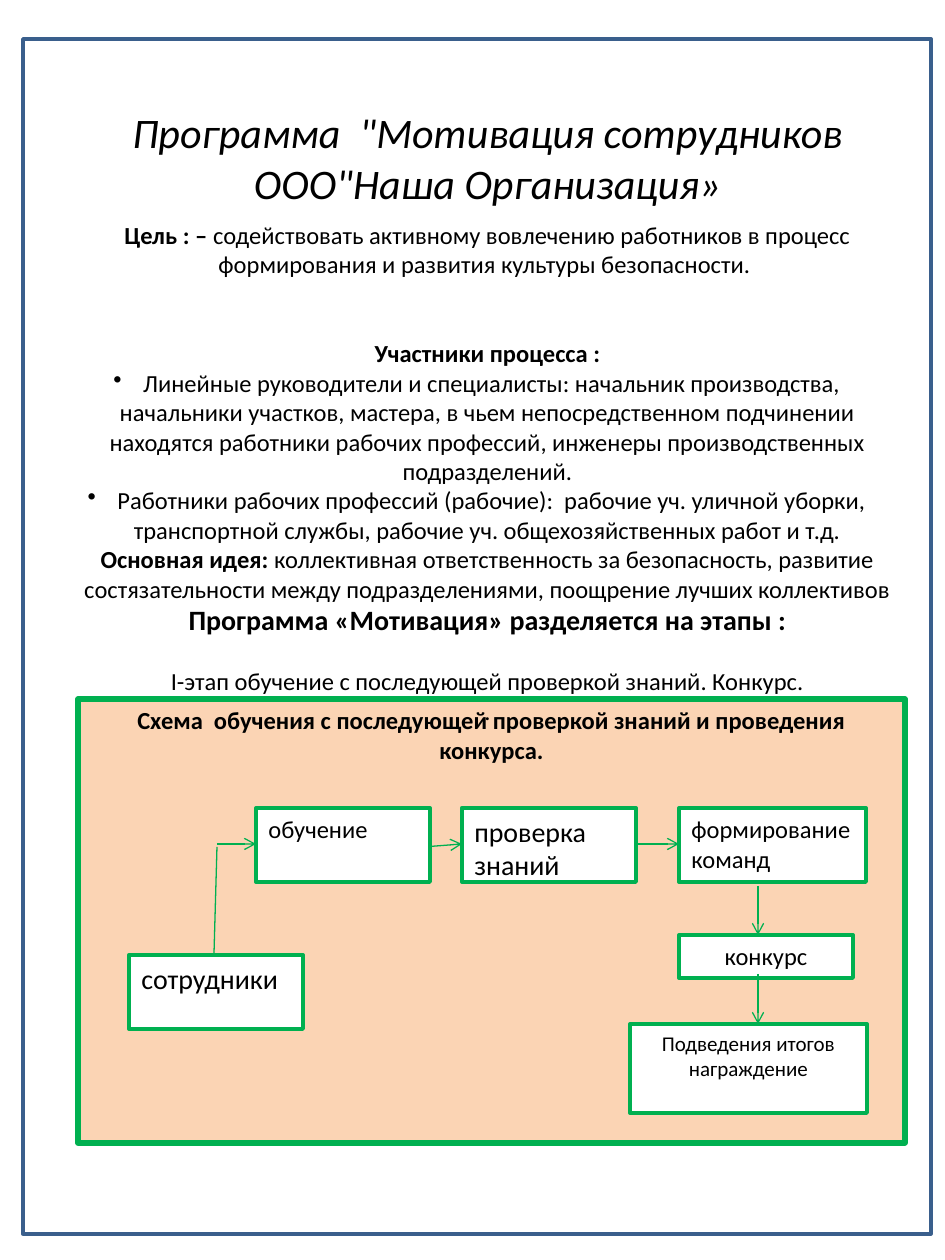
from pptx import Presentation, util as u
from pptx.dml.color import RGBColor
from pptx.enum import shapes, text
from pptx.oxml.ns import qn
from lxml import etree

PX = 914400 / 126
GREEN, BLUE, PEACH = "00B050", "3A5F8C", "FBD4B4"
WHITE, BLACK = "FFFFFF", "000000"
MID, LEFT = text.PP_ALIGN.CENTER, text.PP_ALIGN.LEFT


def px(*vals):
    return [u.Emu(round(v * PX)) for v in vals]


def color(fmt, code):
    fmt.rgb = RGBColor.from_string(code)


def style(font, **vals):
    for key, val in vals.items():
        setattr(font, key, val)


def para(frame, first, runs, size, align=MID, gap=0, after=0, dot=False, italic=False):
    """Add one paragraph; runs are (words, bold) pairs."""
    par = frame.paragraphs[0] if first else frame.add_paragraph()
    style(par, alignment=align, space_before=u.Pt(gap), space_after=u.Pt(after))
    if dot:
        etree.SubElement(par._p.get_or_add_pPr(), qn("a:buChar")).set("char", "•")
    for words, bold in runs:
        run = par.add_run()
        run.text = words
        style(run.font, name="Calibri", size=u.Pt(size), bold=bold, italic=italic)
        color(run.font.color, BLACK)


def rect(slide, box, fill, edge, width):
    shape = slide.shapes.add_shape(shapes.MSO_SHAPE.RECTANGLE, *px(*box))
    shape.shadow.inherit = False
    if fill:
        shape.fill.solid()
        color(shape.fill.fore_color, fill)
    else:
        shape.fill.background()
    color(shape.line.color, edge)
    shape.line.width = u.Pt(width)
    style(shape.text_frame, word_wrap=True, vertical_anchor=text.MSO_ANCHOR.TOP)
    return shape.text_frame


def link(slide, ends, arrow=True):
    line = slide.shapes.add_connector(shapes.MSO_CONNECTOR.STRAIGHT, *px(*ends))
    color(line.line.color, GREEN)
    line.line.width = u.Pt(0.75)
    if arrow:
        etree.SubElement(line.line._get_or_add_ln(), qn("a:tailEnd")).set("type", "arrow")
    etree.SubElement(line._element.spPr, qn("a:effectLst"))


def panel(slide, box):
    frame = rect(slide, box, PEACH, GREEN, 3)
    title = "Схема  обучения с последующей проверкой знаний и проведения конкурса."
    para(frame, True, [(title, True)], 14, after=10)


def program(slide, box):
    frame = slide.shapes.add_textbox(*px(*box)).text_frame
    style(frame, word_wrap=True, vertical_anchor=text.MSO_ANCHOR.MIDDLE)
    rows = [
        ([("Программа  \"Мотивация сотрудников ООО\"Наша Организация»", False)], 24,
         {"italic": True}),
        ([("Цель : – ", True),
          ("содействовать активному вовлечению работников в процесс "
           "формирования и развития культуры безопасности. ", False)], 14, {"gap": 7}),
        ([("Участники процесса :", True)], 14, {"gap": 34}),
        ([("Линейные руководители и специалисты: начальник производства, "
           "начальники участков, мастера, в чьем непосредственном подчинении "
           "находятся работники рабочих профессий, инженеры производственных "
           "подразделений.", False)], 14, {"dot": True}),
        ([("Работники рабочих профессий (рабочие):  рабочие уч. уличной уборки, "
           "транспортной службы, рабочие уч. общехозяйственных работ и т.д.", False)], 14,
         {"dot": True}),
        ([("Основная идея: ", True),
          ("коллективная ответственность за безопасность, развитие "
           "состязательности между подразделениями, поощрение лучших коллективов",
           False)], 14, {}),
        ([("Программа «Мотивация» разделяется на этапы :", True)], 16, {}),
        ([("I-этап обучение с последующей проверкой знаний. Конкурс.", False)], 14,
         {"gap": 17}),
        ([(".", False)], 14, {}),
    ]
    for i, (runs, size, opts) in enumerate(rows):
        para(frame, i == 0, runs, size, **opts)


def scheme(slide, box):
    """Steps and arrows, placed from the panel's top left corner."""
    x, y = box[:2]
    top, mid, tall, wide = 109, 145, 74, 174

    def join(a, b, c, d, arrow=True):
        link(slide, (x + a, y + b, x + c, y + d), arrow)

    # Arrows under the boxes
    join(136, 256, 139, 148, arrow=False)
    join(139, mid, 178, mid)
    join(345, 148, 384, mid)
    join(558, mid, 601, mid)
    join(680, 187, 680, 236)
    # Steps
    steps = [
        (51, 256, wide, tall, ["сотрудники"], 16, LEFT),
        (178, top, wide, tall, ["обучение"], 14, LEFT),
        (384, top, wide, tall, ["проверка знаний"], 16, LEFT),
        (601, top, 187, tall, ["формирование команд"], 14, LEFT),
        (601, 236, wide, 43, ["конкурс"], 14, MID),
        (552, 325, 237, 89, ["Подведения итогов", "награждение"], 12, MID),
    ]
    for a, b, w, h, lines, size, align in steps:
        frame = rect(slide, (x + a, y + b, w, h), WHITE, GREEN, 2.25)
        for i, words in enumerate(lines):
            para(frame, i == 0, [(words, False)], size, align)
    # Arrow over the contest box
    join(680, 275, 680, 325)


def main():
    prs = Presentation()
    prs.slide_width, prs.slide_height = px(945, 1260)
    slide = prs.slides.add_slide(prs.slide_layouts[6])
    box = (78, 699, 827, 444)
    panel(slide, box)
    rect(slide, (23, 39, 908, 1195), None, BLUE, 2)  # page frame
    program(slide, (59, 98, 857, 636))
    scheme(slide, box)
    prs.save("out.pptx")


if __name__ == "__main__":
    main()
